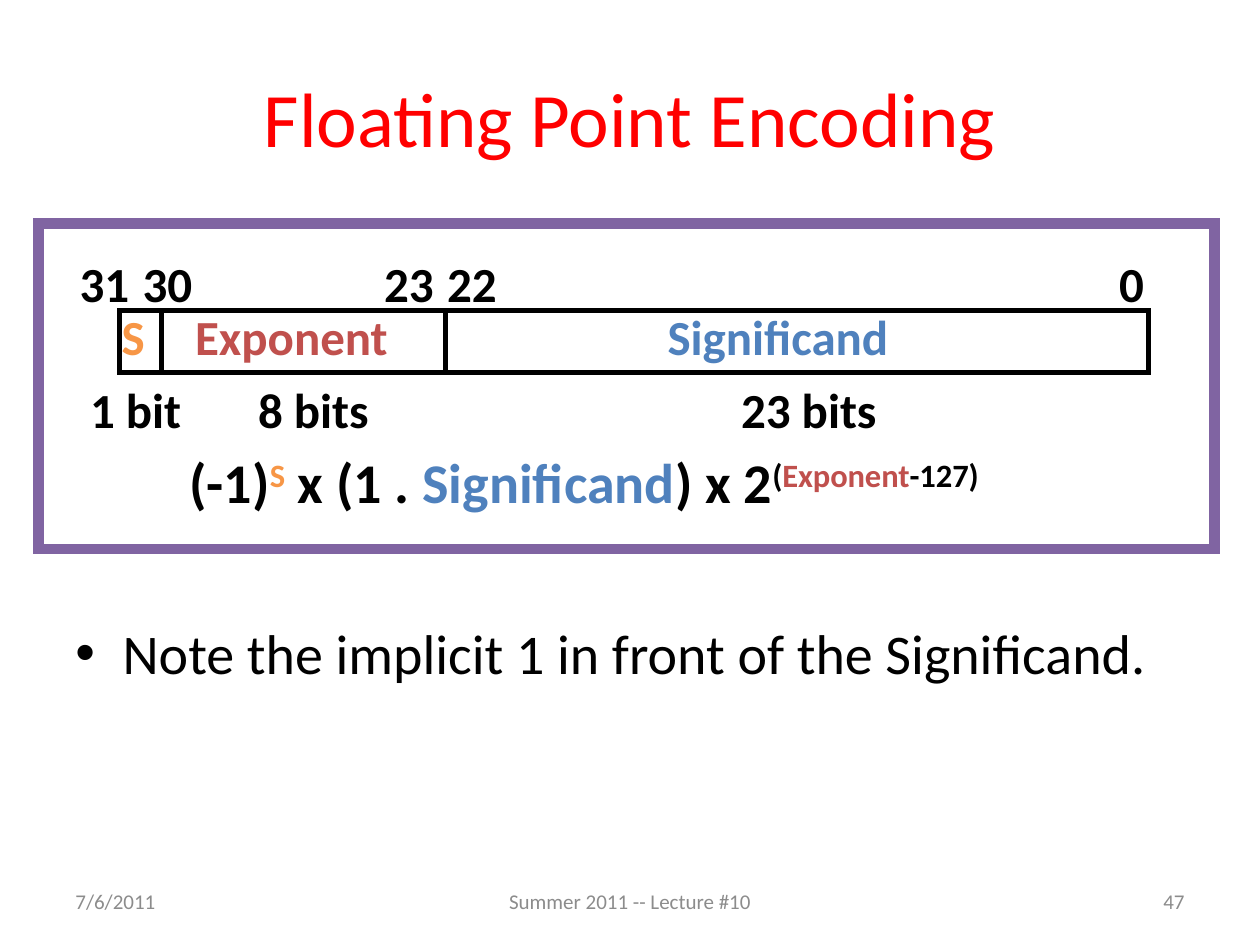
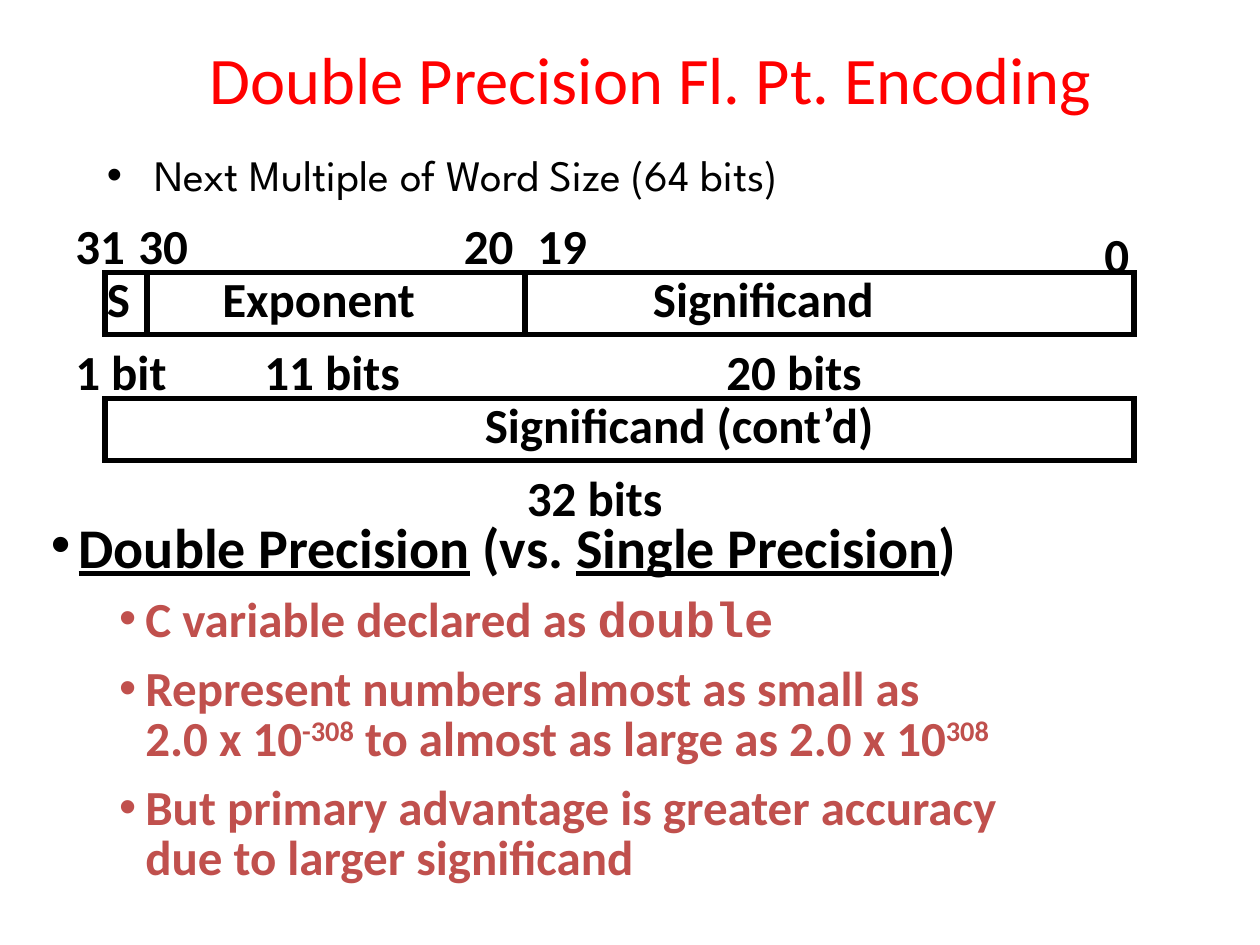
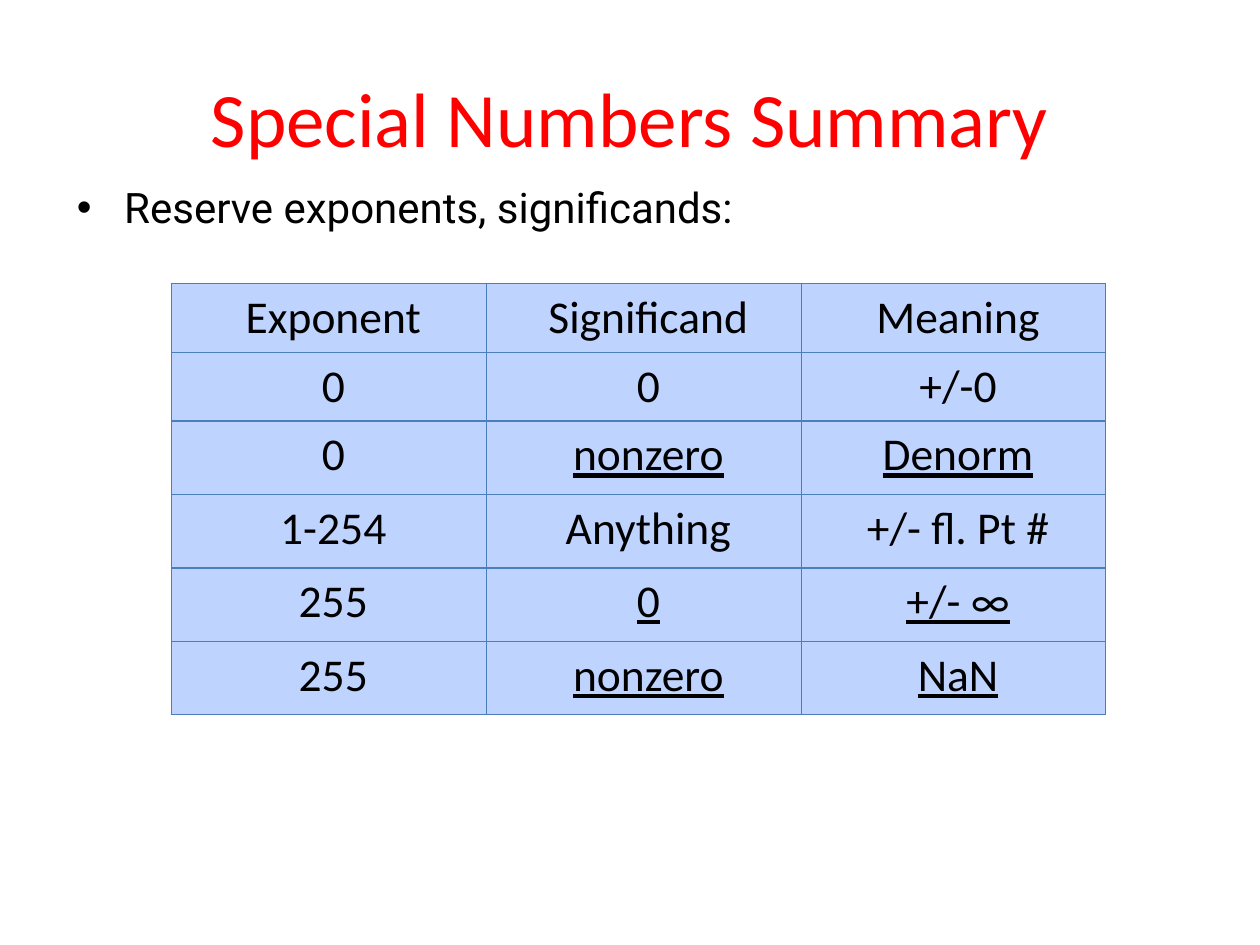
from lxml import etree
from pptx import Presentation
from pptx.dml.color import RGBColor
from pptx.enum.shapes import MSO_CONNECTOR, MSO_SHAPE
from pptx.enum.text import MSO_ANCHOR, MSO_AUTO_SIZE, PP_ALIGN
from pptx.oxml.ns import qn
from pptx.util import Inches, Pt

LEFT, CENTER, RIGHT = PP_ALIGN.LEFT, PP_ALIGN.CENTER, PP_ALIGN.RIGHT
TOP, MIDDLE = MSO_ANCHOR.TOP, MSO_ANCHOR.MIDDLE
RECT, STRAIGHT = MSO_SHAPE.RECTANGLE, MSO_CONNECTOR.STRAIGHT
GROW = MSO_AUTO_SIZE.SHAPE_TO_FIT_TEXT

WIDTH, HEIGHT = Inches(10), Inches(7.5)
COLUMNS = 120
CELL = WIDTH // COLUMNS

FONT = "Calibri"
BLACK, WHITE, RED, GRAY = "000000", "FFFFFF", "FF0000", "8C8C8C"
ORANGE, BRICK, BLUE, PURPLE = "F79646", "C0504D", "4F81BD", "8064A2"
TABLE_FILL, TABLE_LINE = "BFD3FF", "4B7EBC"

TITLE_BOX = (6, 3.6, 108, 15)
REGISTER_W, REGISTER_H = 98, 5.9


def cells(*counts):
    """Turn counts of grid cells into lengths."""
    return [round(n * CELL) for n in counts]


def rgb(color):
    """Turn a hex string into a colour."""
    return RGBColor.from_string(color)


def add_run(p, text, size, color=BLACK, font=FONT, bold=False, underline=False, base=0):
    """Add one formatted run; base raises it by a percentage."""
    r = p.add_run()
    r.text = text
    r.font.size, r.font.name = Pt(size), font
    r.font.bold, r.font.underline = bold, underline
    r.font.color.rgb = rgb(color)
    if base:
        r._r.get_or_add_rPr().set("baseline", str(base * 1000))


def add_box(shapes, box, anchor=TOP, wrap=True, tight=False):
    """Add a text box and return its text frame."""
    tf = shapes.add_textbox(*cells(*box)).text_frame
    tf.word_wrap = wrap
    tf.vertical_anchor = anchor
    if tight:
        tf.margin_left, tf.margin_top, tf.margin_right, tf.margin_bottom = cells(0.84, 0.36, 0.84, 0.36)
    return tf


def add_line_of_text(shapes, box, text, size, color, align=LEFT):
    """Add a box with one vertically centred line."""
    p = add_box(shapes, box, MIDDLE).paragraphs[0]
    p.alignment = align
    add_run(p, text, size, color)


def add_title(slide, text, box=TITLE_BOX, size=44):
    """Add the red slide title."""
    add_line_of_text(slide.shapes, box, text, size, RED, CENTER)


def add_footer(slide, date, lecture, number):
    """Add date, lecture and slide number along the bottom."""
    for col, width, text, align in (
        (6, 28, date, LEFT),
        (41, 38, lecture, CENTER),
        (86, 28, number, RIGHT),
    ):
        add_line_of_text(slide.shapes, (col, 83.4, width, 4.8), text, 12, GRAY, align)


def set_bullet(p, indent, hang):
    """Give a paragraph a round bullet with a hanging indent."""
    pPr = p._p.get_or_add_pPr()
    left, back = cells(indent, hang)
    pPr.set("marL", str(left))
    pPr.set("indent", str(-back))
    etree.SubElement(pPr, qn("a:buFont")).set("typeface", "Arial")
    etree.SubElement(pPr, qn("a:buChar")).set("char", "•")


def add_note(slide, box, text, size, font=FONT, spacing=1.0):
    """Add a single bulleted line."""
    p = add_box(slide.shapes, box).paragraphs[0]
    p.line_spacing = spacing
    set_bullet(p, 4.5, 4.5)
    add_run(p, text, size, font=font)


def add_frame(shapes, box, color, width, fill=None):
    """Add an outlined rectangle with square corners."""
    s = shapes.add_shape(RECT, *cells(*box))
    s.shadow.inherit = False
    if fill:
        s.fill.solid()
        s.fill.fore_color.rgb = rgb(fill)
    else:
        s.fill.background()
    s.line.color.rgb = rgb(color)
    s.line.width = Pt(width)
    etree.SubElement(s._element.spPr.find(qn("a:ln")), qn("a:miter")).set("lim", "800000")


def add_register(slide, col, row, dividers, labels):
    """Draw a 32-bit word; labels are (column, row, text, colour) from its corner."""
    shapes = slide.shapes.add_group_shape().shapes
    add_frame(shapes, (col, row, REGISTER_W, REGISTER_H), BLACK, 3)
    for dx in dividers:
        x = col + dx
        line = shapes.add_connector(STRAIGHT, *cells(x, row, x, row + REGISTER_H))
        line.line.color.rgb = rgb(BLACK)
        line.line.width = Pt(3)
        etree.SubElement(line._element.spPr, qn("a:effectLst"))
    for dx, dy, text, color in labels:
        box = (col + dx, row + dy, 3 + 2.3 * len(text), 6.8)
        tf = add_box(shapes, box, wrap=False)
        tf.auto_size = GROW
        add_run(tf.paragraphs[0], text, 28, color, bold=True)


def label_row(dy, *items):
    """Place black labels, given as (column, text), on one row."""
    return [(dx, dy, text, BLACK) for dx, text in items]


def add_formula(slide, box):
    """Write the value of a floating point word."""
    p = add_box(slide.shapes, box, tight=True).paragraphs[0]
    p.line_spacing = 0.75
    for text, color, base in (
        ("(-1)", BLACK, 0), ("S", ORANGE, 30), (" x (1 . ", BLACK, 0),
        ("Significand", BLUE, 0), (") x 2", BLACK, 0),
        ("(", BLACK, 30), ("Exponent", BRICK, 30), ("-127)", BLACK, 30),
    ):
        add_run(p, text, 32, color, bold=True, base=base)


def add_comparison(slide, box):
    """List what double precision offers over single precision."""
    tf = add_box(slide.shapes, box, tight=True)
    p = tf.paragraphs[0]
    p.line_spacing = 0.75
    set_bullet(p, 2.64, 2.64)
    for text, underline in (("Double Precision", True), (" (vs. ", False),
                            ("Single Precision", True), (")", False)):
        add_run(p, text, 32, bold=True, underline=underline)
    points = (
        [[("C variable declared as ", {}), ("double", {"font": "Courier New"})]],
        [[("Represent numbers almost as small as ", {})],
         [("2.0 x 10", {}), ("-308", {"base": 30}),
          (" to almost as large as 2.0 x 10", {}), ("308", {"base": 30})]],
        [[("But primary advantage is greater accuracy ", {})],
         [("due to larger significand", {})]],
    )
    for lines in points:
        p = tf.add_paragraph()
        p.level, p.line_spacing, p.space_before = 1, 0.85, Pt(11)
        set_bullet(p, 9, 2.5)
        for i, runs in enumerate(lines):
            if i:
                p.add_line_break()
            for text, style in runs:
                add_run(p, text, 28, BRICK, bold=True, **style)


def set_borders(cell):
    """Draw a thin line on every side of a cell."""
    tcPr = cell._tc.get_or_add_tcPr()
    for side in "LRTB":
        ln = etree.SubElement(tcPr, qn(f"a:ln{side}"), w=str(Pt(0.75)))
        fill = etree.SubElement(ln, qn("a:solidFill"))
        etree.SubElement(fill, qn("a:srgbClr")).set("val", TABLE_LINE)


def add_table(slide, col, row, widths, heights, rows, underlined):
    """Add the table of reserved values."""
    box = cells(col, row, sum(widths), sum(heights))
    table = slide.shapes.add_table(len(rows), len(widths), *box).table
    table.first_row = table.horz_banding = False
    for column, width in zip(table.columns, cells(*widths)):
        column.width = width
    for line, height in zip(table.rows, cells(*heights)):
        line.height = height
    for i, texts in enumerate(rows):
        for j, text in enumerate(texts):
            cell = table.cell(i, j)
            set_borders(cell)
            cell.fill.solid()
            cell.fill.fore_color.rgb = rgb(TABLE_FILL)
            p = cell.text_frame.paragraphs[0]
            p.alignment, p.space_before = CENTER, Pt(7)
            p._p.get_or_add_pPr().set("marL", str(cells(0.9)[0]))
            add_run(p, text, 26, underline=i in underlined and j > 0)


def single_precision(slide):
    """Build the single precision slide."""
    add_title(slide, "Floating Point Encoding")
    add_note(slide, (6, 58.35, 108, 21.8), "Note the implicit 1 in front of the Significand.", 32)
    add_footer(slide, "7/6/2011", "Summer 2011 -- Lecture #10", "47")
    add_frame(slide.shapes, (3.65, 21.3, 112, 31), PURPLE, 6, WHITE)
    add_register(slide, 11.4, 29.6, (4, 31), [
        *label_row(-6, (-5, "31"), (1, "30"), (24, "23"), (30, "22"), (94, "0")),
        (-1, -1, "S", ORANGE), (6, -1, "Exponent", BRICK), (51, -1, "Significand", BLUE),
        *label_row(6, (-4, "1 bit"), (12, "8 bits"), (58, "23 bits")),
    ])
    add_formula(slide, (17.2, 43.8, 102, 5.8))


def double_precision(slide):
    """Build the double precision slide."""
    add_title(slide, "Double Precision Fl. Pt. Encoding", (8, 2.8, 108, 9.2), 38)
    add_note(slide, (9, 13.55, 103, 5.4), "Next Multiple of Word Size (64 bits)", 24.8, "League Spartan")
    add_comparison(slide, (4, 49.9, 111, 36.4))
    add_register(slide, 10, 25.95, (4, 40), [
        *label_row(-6, (-4, "31"), (2, "30"), (33, "20"), (40, "19")),
        *label_row(-5.2, (94, "0")),
        *label_row(-1, (-1, "S"), (10, "Exponent"), (51, "Significand")),
        *label_row(6, (-4, "1 bit"), (14, "11 bits"), (58, "20 bits")),
    ])
    add_register(slide, 10, 37.95, (), [
        *label_row(-1, (35, "Significand (cont’d)")),
        *label_row(6, (39, "32 bits")),
    ])


def special_numbers(slide):
    """Build the slide of special numbers."""
    add_title(slide, "Special Numbers Summary")
    add_note(slide, (6.15, 17.2, 108, 10), "Reserve exponents, significands:", 24, "Roboto", 0.9)
    add_table(slide, 16.3, 27, (30, 30, 29), (6.55, 6.55, 7, 7, 7, 7), (
        ("Exponent", "Significand", "Meaning"),
        ("0", "0", "+/-0"),
        ("0", "nonzero", "Denorm"),
        ("1-254", "Anything", "+/- fl. Pt #"),
        ("255", "0", "+/- ∞"),
        ("255", "nonzero", "NaN"),
    ), underlined=(2, 4, 5))


def main():
    """Build and save the deck."""
    prs = Presentation()
    prs.slide_width, prs.slide_height = WIDTH, HEIGHT
    for build in (single_precision, double_precision, special_numbers):
        build(prs.slides.add_slide(prs.slide_layouts[6]))
    prs.save("out.pptx")


if __name__ == "__main__":
    main()
